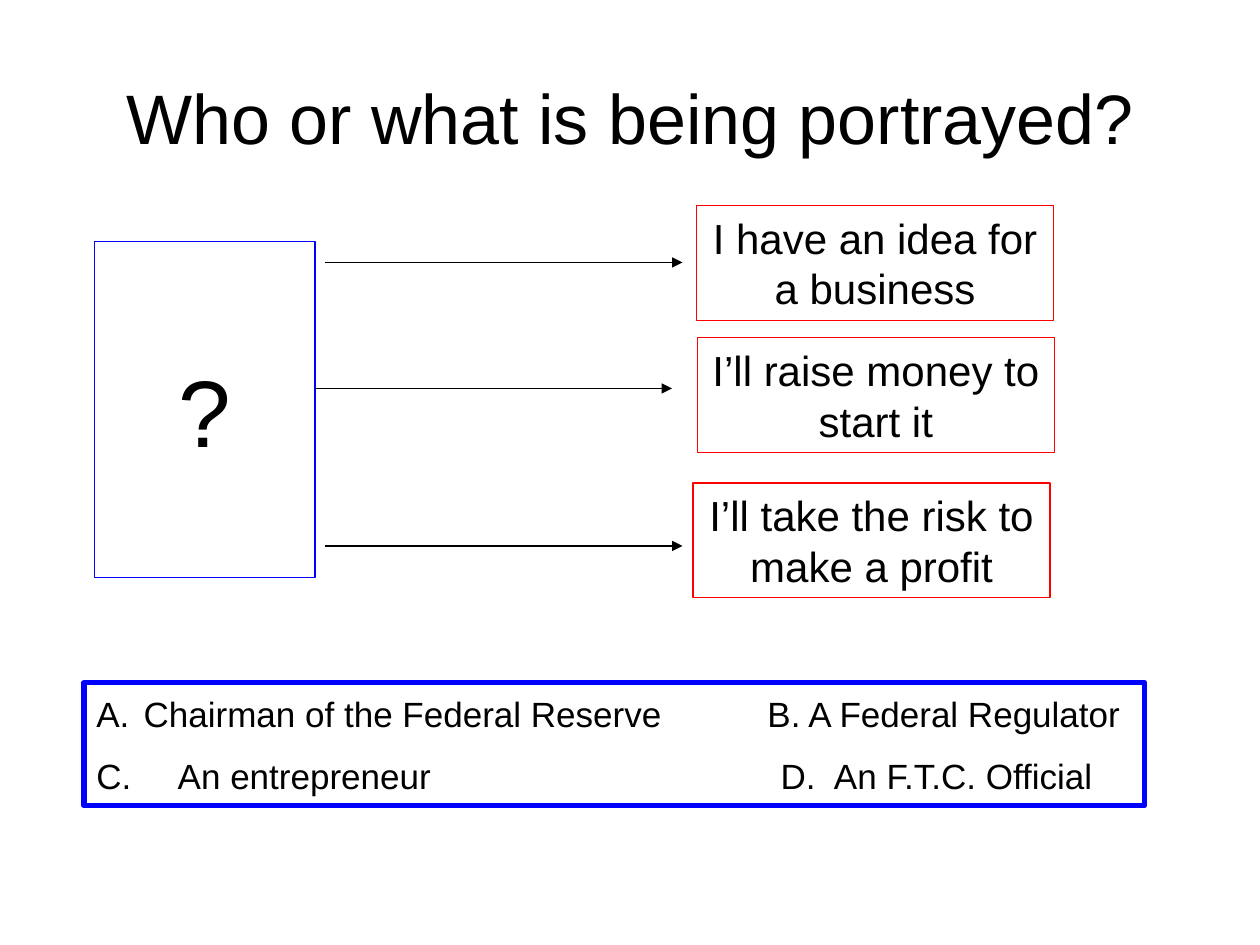
"""Build a quiz slide asking who is portrayed by three statements."""
from dataclasses import dataclass

from lxml import etree
from pptx import Presentation
from pptx.dml.color import RGBColor
from pptx.enum.shapes import MSO_CONNECTOR, MSO_SHAPE
from pptx.enum.text import MSO_ANCHOR, PP_ALIGN
from pptx.oxml.ns import qn
from pptx.util import Pt

RECTANGLE = MSO_SHAPE.RECTANGLE
STRAIGHT = MSO_CONNECTOR.STRAIGHT
MIDDLE = MSO_ANCHOR.MIDDLE
LEFT, CENTER = PP_ALIGN.LEFT, PP_ALIGN.CENTER


@dataclass(frozen=True)
class Theme:
    font: str = "Arial"
    ink: RGBColor = RGBColor(0, 0, 0)
    paper: RGBColor = RGBColor(255, 255, 255)
    blue: RGBColor = RGBColor(0, 0, 255)
    red: RGBColor = RGBColor(255, 0, 0)
    title: int = 40
    mystery: int = 54
    statement: int = 24
    answer: int = 20
    thin: float = 0.75
    thick: float = 3


THEME = Theme()


def write(frame, text, *, size, align=CENTER, gap=0, wrap=True):
    frame.word_wrap = wrap
    frame.vertical_anchor = MIDDLE
    for index, line in enumerate(text.split("\n")):
        para = frame.paragraphs[0] if index == 0 else frame.add_paragraph()
        para.alignment = align
        para.space_before = Pt(gap if index else 0)
        span = para.add_run()
        span.text = line
        span.font.name = THEME.font
        span.font.size = Pt(size)
        span.font.color.rgb = THEME.ink


def add_box(page, bounds, line, weight, fill=None):
    box = page.shapes.add_shape(RECTANGLE, *map(Pt, bounds))
    box.shadow.inherit = False
    if fill is None:
        box.fill.background()
    else:
        box.fill.solid()
        box.fill.fore_color.rgb = fill
    box.line.color.rgb = line
    box.line.width = Pt(weight)
    return box


deck = Presentation()
deck.slide_width, deck.slide_height = Pt(720), Pt(540)
page = deck.slides.add_slide(deck.slide_layouts[6])

title = page.shapes.add_textbox(Pt(36), Pt(21.6), Pt(648), Pt(90))
write(title.text_frame, "Who or what is being portrayed?", size=THEME.title)

mystery = add_box(page, (54, 138, 126, 192), THEME.blue, THEME.thin, THEME.paper)
write(mystery.text_frame, "?", size=THEME.mystery, wrap=False)

statements = [
    ("I have an idea for a business", 398, 117.5, 186, 150),
    ("I’ll raise money to start it", 398.5, 193, 180, 222),
    ("I’ll take the risk to make a profit", 396, 276, 186, 312),
]
for text, left, top, arrow_left, arrow_y in statements:
    arrow = page.shapes.add_connector(
        STRAIGHT, Pt(arrow_left), Pt(arrow_y), Pt(arrow_left + 204), Pt(arrow_y))
    arrow.line.color.rgb = THEME.ink
    arrow.line.width = Pt(THEME.thin)
    etree.SubElement(arrow.line._get_or_add_ln(), qn("a:tailEnd"), type="triangle")
    etree.SubElement(arrow._element.spPr, qn("a:effectLst"))
    statement = add_box(page, (left, top, 204, 65.5), THEME.red, THEME.thin)
    write(statement.text_frame, text, size=THEME.statement)

answers = add_box(page, (48, 390, 606, 70.5), THEME.blue, THEME.thick)
write(answers.text_frame,
      "A.\tChairman of the Federal Reserve\tB. A Federal Regulator\n"
      "C.\tAn entrepreneur\tD.\tAn F.T.C. Official",
      size=THEME.answer, align=LEFT, gap=11.5)
answer_stops = [(27, 383.5), (46.5, 391, 421.5)]
for para, stops in zip(answers.text_frame.paragraphs, answer_stops):
    tabs = etree.SubElement(para._p.get_or_add_pPr(), qn("a:tabLst"))
    for stop in stops:
        etree.SubElement(tabs, qn("a:tab"), pos=str(Pt(stop)), algn="l")

deck.save("out.pptx")
